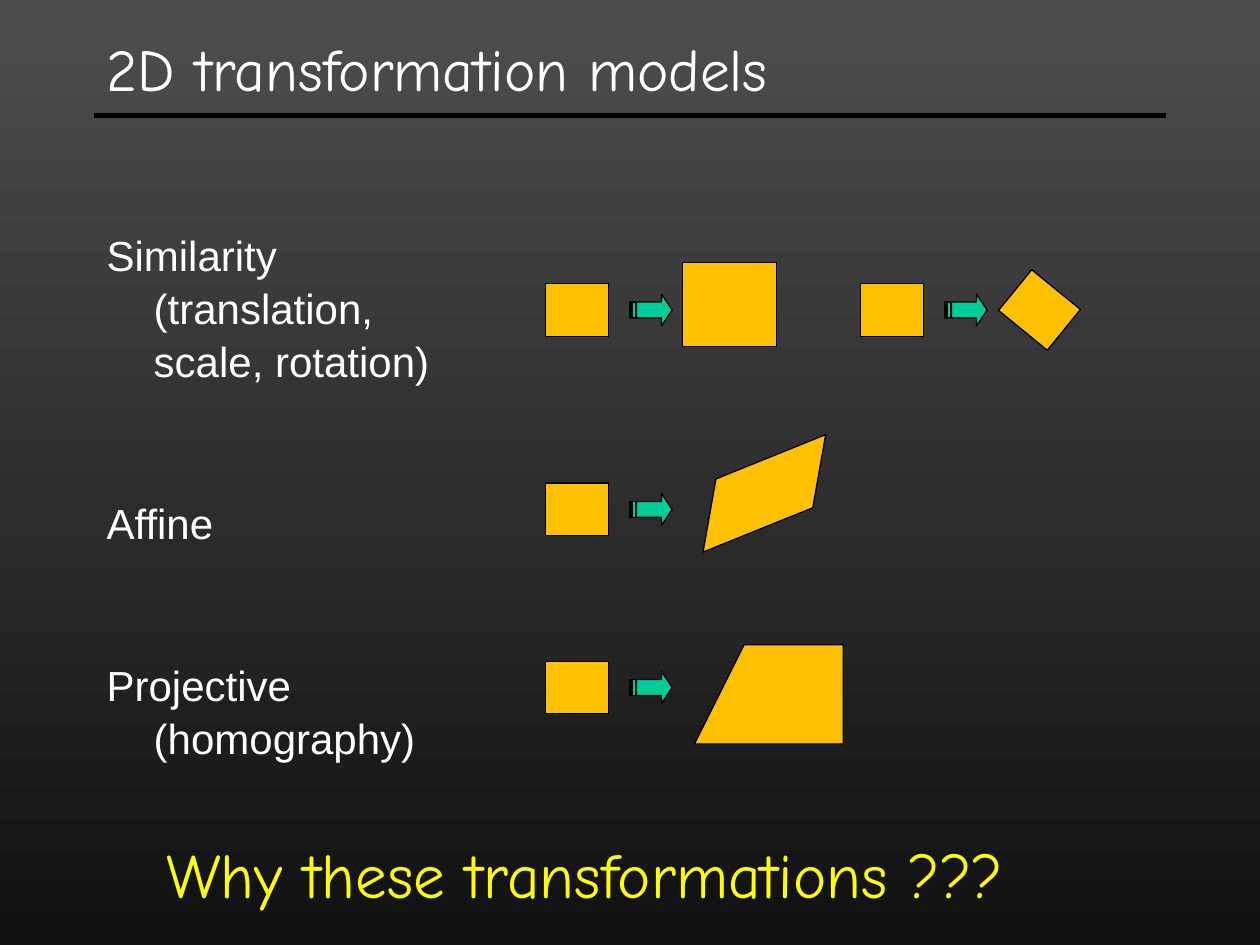
from dataclasses import dataclass

from lxml import etree
from pptx import Presentation
from pptx import util as u
from pptx.dml.color import RGBColor
from pptx.enum import shapes, text
from pptx.oxml.ns import qn


@dataclass(frozen=True)
class Theme:
    background: tuple = ("4D4D4D", "111111")
    white: str = "FFFFFF"
    yellow: str = "FFFF00"
    black: str = "000000"
    gold: str = "FFC000"
    green: str = "00CC99"
    heading_font: str = "Comic Neue"
    body_font: str = "Arial"
    title_size: int = 34
    body_size: int = 24
    question_size: int = 36
    outline: float = 0.75
    rule: float = 3


theme = Theme()


def style_shape(shape, color):
    shape.shadow.inherit = False
    shape.fill.solid()
    shape.fill.fore_color.rgb = RGBColor.from_string(color)
    shape.line.color.rgb = RGBColor.from_string(theme.black)
    shape.line.width = u.Pt(theme.outline)


def style_text(paragraph, font, size, color):
    paragraph.alignment = text.PP_ALIGN.LEFT
    for run in paragraph.runs:
        run.font.name = font
        run.font.size = u.Pt(size)
        run.font.color.rgb = RGBColor.from_string(color)


presentation = Presentation()
presentation.slide_width = u.Cm(25.4)
presentation.slide_height = u.Cm(19.05)
slide = presentation.slides.add_slide(presentation.slide_layouts[5])

background = slide.background.fill
background.gradient()
background.gradient_angle = 270
for stop, color, position in zip(background.gradient_stops, theme.background, (0, 1)):
    stop.color.rgb = RGBColor.from_string(color)
    stop.position = position

rule = slide.shapes.add_connector(
    shapes.MSO_CONNECTOR.STRAIGHT, u.Cm(1.9), u.Cm(2.33), u.Cm(23.5), u.Cm(2.33)
)
rule.line.color.rgb = RGBColor.from_string(theme.black)
rule.line.width = u.Pt(theme.rule)
etree.SubElement(rule._element.spPr, qn("a:effectLst"))

title = slide.shapes.title
title.left, title.top, title.width, title.height = u.Cm(1.9), u.Cm(0.21), u.Cm(21.59), u.Cm(2.33)
title.text_frame.text = "2D transformation models"
title.text_frame.auto_size = text.MSO_AUTO_SIZE.NONE
title.text_frame.vertical_anchor = text.MSO_ANCHOR.MIDDLE
style_text(title.text_frame.paragraphs[0], theme.heading_font, theme.title_size, theme.white)

models = [
    ("Similarity\v(translation,\vscale, rotation)", 2),
    ("Affine", 62.5),
    ("Projective\v(homography)", 62.5),
]
body = slide.shapes.add_textbox(u.Cm(1.9), u.Cm(4.45), u.Cm(22.23), u.Cm(14.6)).text_frame
body.word_wrap = True
for index, (label, space_before) in enumerate(models):
    paragraph = body.paragraphs[0] if index == 0 else body.add_paragraph()
    paragraph.text = label
    paragraph.space_before = u.Pt(space_before)
    paragraph.line_spacing = 1.05
    properties = paragraph._p.get_or_add_pPr()
    properties.set("marL", str(u.Cm(0.95)))
    properties.set("indent", str(-u.Cm(0.95)))
    style_text(paragraph, theme.body_font, theme.body_size, theme.white)

square_width, square_height = 1.27, 1.06
arrow_width, arrow_height = 0.85, 0.64
arrow_outline = [(24, 0), (24, 1), (5, 1), (5, 3), (24, 3), (24, 4), (32, 2)]
arrow_stripes = [(2, 4), (0, 1)]
for left, middle in [(11, 6.25), (17.35, 6.25), (11, 10.27), (11, 13.86)]:
    square = slide.shapes.add_shape(
        shapes.MSO_SHAPE.RECTANGLE,
        u.Cm(left), u.Cm(middle - square_height / 2), u.Cm(square_width), u.Cm(square_height),
    )
    style_shape(square, theme.gold)

    builder = slide.shapes.build_freeform(
        *arrow_outline[0], scale=(u.Cm(arrow_width) / 32, u.Cm(arrow_height) / 4)
    )
    builder.add_line_segments(arrow_outline[1:], close=True)
    for start, end in arrow_stripes:
        builder.move_to(start, 1)
        builder.add_line_segments([(start, 3), (end, 3), (end, 1)], close=True)
    arrow = builder.convert_to_shape(u.Cm(left + 1.7), u.Cm(middle - arrow_height / 2))
    style_shape(arrow, theme.green)

results = [
    (shapes.MSO_SHAPE.RECTANGLE, 13.76, 5.29, 1.9, 1.69, 0),
    (shapes.MSO_SHAPE.RECTANGLE, 20.32, 5.72, square_width, square_height, 39.2),
    (shapes.MSO_SHAPE.PARALLELOGRAM, 13.82, 9.31, 3.18, 1.27, 338),
]
for kind, left, top, width, height, rotation in results:
    result = slide.shapes.add_shape(kind, u.Cm(left), u.Cm(top), u.Cm(width), u.Cm(height))
    result.rotation = rotation
    if kind == shapes.MSO_SHAPE.PARALLELOGRAM:
        result.adjustments[0] = 0.625
    style_shape(result, theme.gold)

corners = [(14.18, 14.6), (14.6, 13.33), (16.51, 12.91), (16.72, 14.82)]
builder = slide.shapes.build_freeform(*corners[0], scale=u.Cm(1))
builder.add_line_segments(corners[1:], close=True)
style_shape(builder.convert_to_shape(), theme.gold)

question = slide.shapes.add_textbox(u.Cm(3.1), u.Cm(16.72), u.Cm(19.48), u.Cm(1.8)).text_frame
question.word_wrap = True
question.text = "Why these transformations ???"
style_text(question.paragraphs[0], theme.heading_font, theme.question_size, theme.yellow)

presentation.save("out.pptx")
